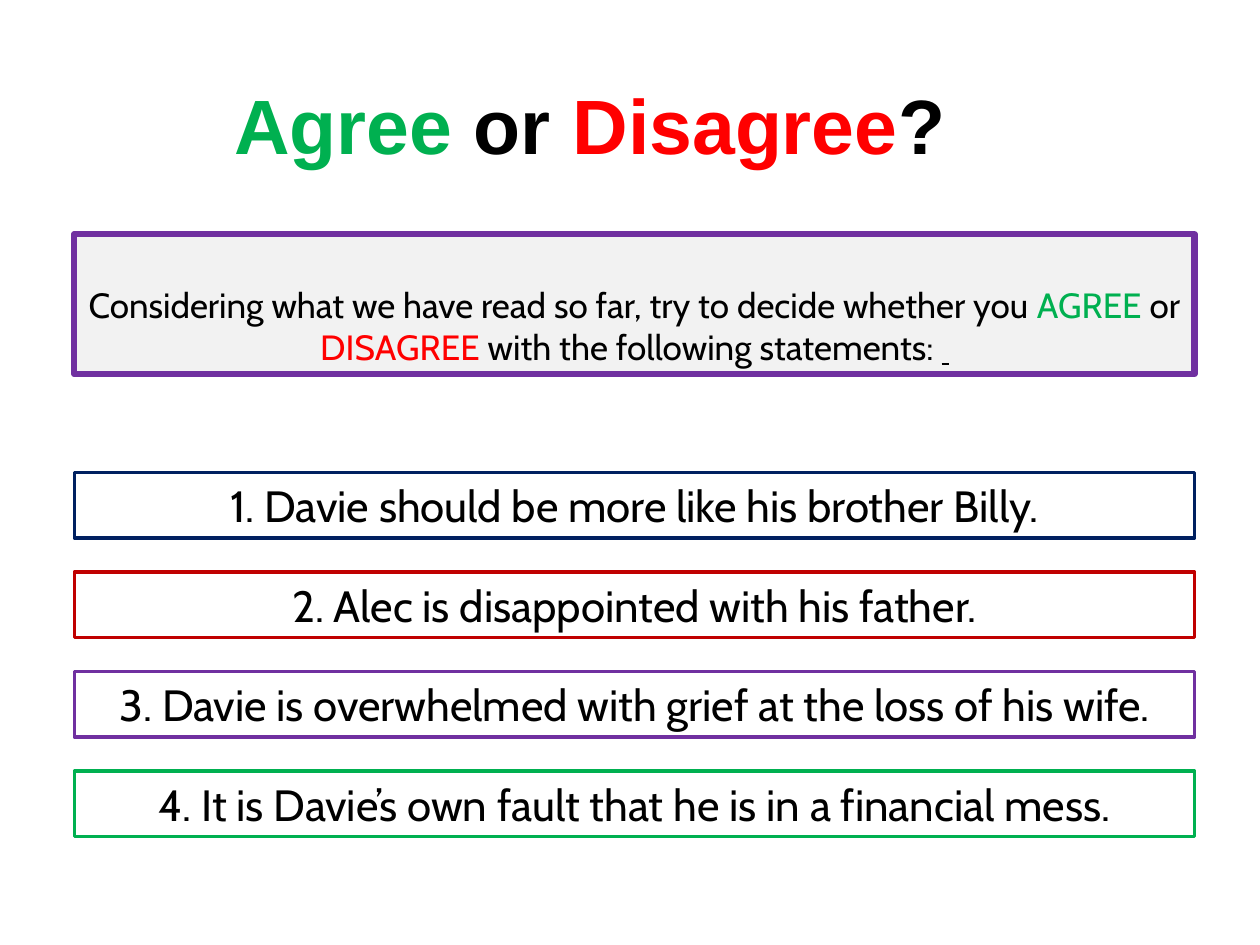
from dataclasses import dataclass

from pptx import Presentation
from pptx.dml.color import RGBColor
from pptx.enum.shapes import MSO_SHAPE as Shape
from pptx.enum.text import MSO_ANCHOR as Anchor, PP_ALIGN as Align
from pptx.util import Inches, Pt


@dataclass(frozen=True)
class Theme:
    title_font: str = "Arial"
    body_font: str = "Cabin"
    title_size: int = 44
    intro_size: int = 20
    tail_size: int = 18
    statement_size: int = 25
    black: str = "000000"
    green: str = "00B050"
    red: str = "FF0000"
    dark_red: str = "C00000"
    navy: str = "002060"
    purple: str = "7030A0"
    pale_grey: str = "F2F2F2"


class SlideBuilder:
    def __init__(self, slide, theme):
        self.slide = slide
        self.theme = theme

    def add_runs(self, paragraph, parts, font_name, size, bold=False):
        """Fill a centred paragraph with (text, colour) parts, one run each."""
        paragraph.alignment = Align.CENTER
        for text, color in parts:
            run = paragraph.add_run()
            run.text = text
            run.font.name = font_name
            run.font.size = Pt(size)
            run.font.bold = bold
            run.font.color.rgb = RGBColor.from_string(color)

    def title(self, parts, left, top, width, height):
        title = self.slide.shapes.title
        title.left, title.top = Inches(left), Inches(top)
        title.width, title.height = Inches(width), Inches(height)
        title.text_frame.vertical_anchor = Anchor.MIDDLE
        self.add_runs(title.text_frame.paragraphs[0], parts,
                      self.theme.title_font, self.theme.title_size, bold=True)

    def box(self, parts, top, height, size, line, line_width,
            fill=None, anchor=Anchor.TOP):
        """Add a full-width outlined text box and return its paragraph."""
        shape = self.slide.shapes.add_shape(
            Shape.RECTANGLE, Inches(0.59), Inches(top), Inches(8.89), Inches(height))
        shape.shadow.inherit = False
        if fill:
            shape.fill.solid()
            shape.fill.fore_color.rgb = RGBColor.from_string(fill)
        else:
            shape.fill.background()
        shape.line.color.rgb = RGBColor.from_string(line)
        shape.line.width = Pt(line_width)
        frame = shape.text_frame
        frame.word_wrap = True
        frame.vertical_anchor = anchor
        paragraph = frame.paragraphs[0]
        self.add_runs(paragraph, parts, self.theme.body_font, size)
        return paragraph


def main():
    theme = Theme()
    presentation = Presentation()
    presentation.slide_width, presentation.slide_height = Inches(10), Inches(7.5)
    title_only = presentation.slide_layouts[5]
    builder = SlideBuilder(presentation.slides.add_slide(title_only), theme)

    builder.title([("Agree", theme.green), (" or ", theme.black),
                   ("Disagree", theme.red), ("?", theme.black)],
                  0.18, 0.36, 9, 1.25)

    intro = builder.box(
        [("Considering what we have read so far, try to decide whether you ", theme.black),
         ("AGREE", theme.green), (" or ", theme.black), ("DISAGREE", theme.red),
         (" with the following statements: ", theme.black), (" ", theme.black)],
        1.86, 1.11, theme.intro_size, theme.purple, 3.5,
        fill=theme.pale_grey, anchor=Anchor.BOTTOM)
    underlined_tail = intro.runs[-1].font
    underlined_tail.size = Pt(theme.tail_size)
    underlined_tail.underline = True

    statements = [
        ("Davie should be more like his brother Billy.", theme.navy),
        ("Alec is disappointed with his father.", theme.dark_red),
        ("Davie is overwhelmed with grief at the loss of his wife.", theme.purple),
        ("It is Davie’s own fault that he is in a financial mess.", theme.green),
    ]
    first_top, pitch = 3.75, 0.79
    for index, (text, color) in enumerate(statements):
        builder.box([(f"{index + 1}. {text}", theme.black)],
                    first_top + index * pitch, 0.52, theme.statement_size, color, 2)

    presentation.save("out.pptx")


if __name__ == "__main__":
    main()
